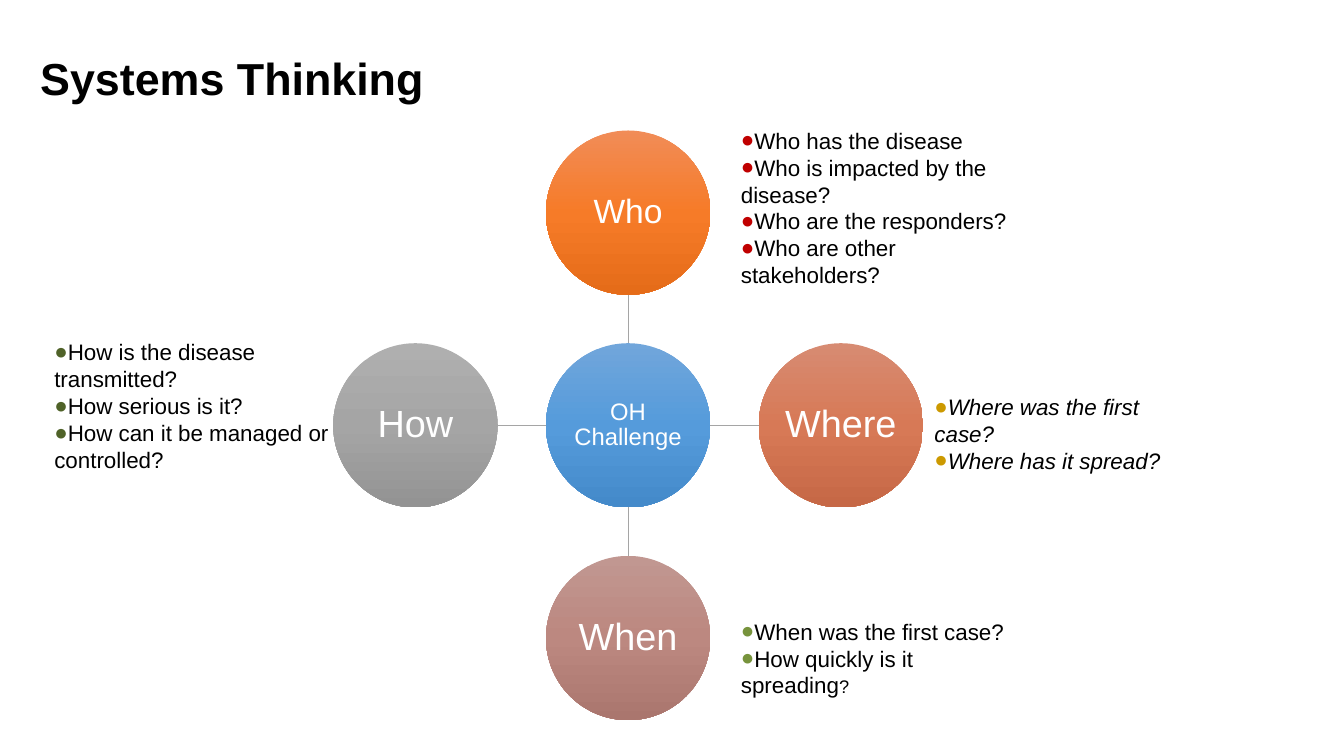
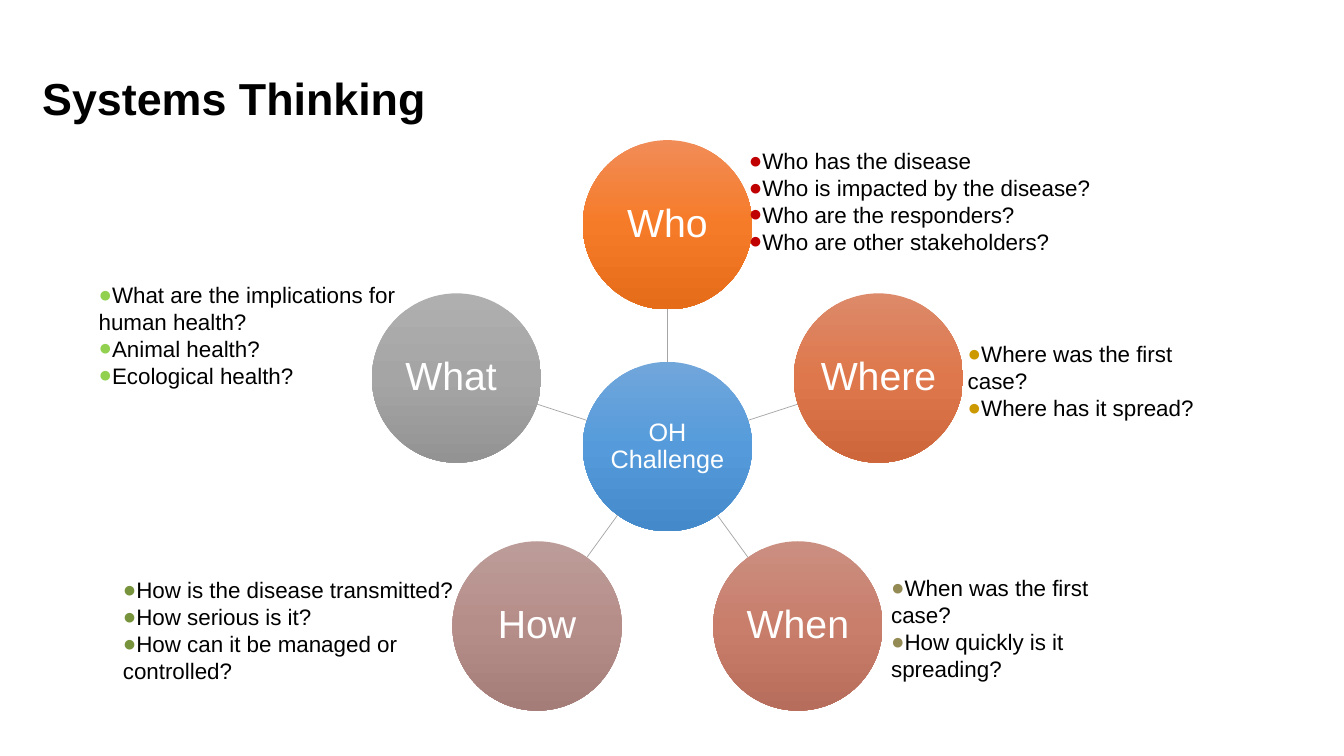
import math
from dataclasses import dataclass

from pptx import Presentation
from pptx import util as u
from pptx.dml.color import RGBColor
from pptx.enum import shapes, text
from pptx.oxml import ns
from lxml import etree

SCALE = 9144  # EMU in one px, 100 px to the inch
FONT = "Arial"
INK, PAPER, RULE = "000000", "FFFFFF", "A5A5A5"
HUB = ("71A6DB", "559BDB", "448ACA")
ORANGE = ("F18C57", "F67B28", "E56C19")
GREY = ("AFAFAF", "A5A5A5", "939393")

WHO = ["Who has the disease", "Who is impacted by the disease?",
       "Who are the responders?", "Who are other stakeholders?"]
WHERE = ["Where was the first case?", "Where has it spread?"]
WHEN = ["When was the first case?", "How quickly is it spreading?"]
HOW = ["How is the disease transmitted?", "How serious is it?",
       "How can it be managed or controlled?"]
WHAT = ["What are the implications for human health?",
        "Animal health?", "Ecological health?"]


@dataclass
class Spoke:
    """One outer circle and the note of questions beside it."""
    word: str
    size: int
    tones: tuple
    box: tuple
    dot: str
    lines: list
    slant: bool = False
    mark: int = 16  # size of the last question mark


def px(n):
    return u.Emu(round(n * SCALE))


def color(code):
    return RGBColor.from_string(code)


def sub(node, tag, **attrs):
    return etree.SubElement(node, ns.qn(tag), attrs)


def write(para, words, size, ink=INK, bold=False, slant=False):
    run = para.add_run()
    run.text = words
    font = run.font
    font.name, font.size = FONT, u.Pt(size)
    font.bold, font.italic = bold, slant
    font.color.rgb = color(ink)


def frame(slide, box):
    """Add a wrapping text box and return its text frame."""
    body = slide.shapes.add_textbox(*map(px, box)).text_frame
    body.word_wrap = True
    body.auto_size = text.MSO_AUTO_SIZE.SHAPE_TO_FIT_TEXT
    return body


def title(slide, box):
    write(frame(slide, box).paragraphs[0], "Systems Thinking", 32, bold=True)


def shade(shape, tones):
    """Fill from top to bottom through evenly spaced tones."""
    shape.fill.gradient()
    shape.fill.gradient_angle = 270
    stops = next(shape.element.iter(ns.qn("a:gsLst")))
    for old in list(stops):
        stops.remove(old)
    for i, tone in enumerate(tones):
        pos = 100000 * i // (len(tones) - 1)
        sub(sub(stops, "a:gs", pos=str(pos)), "a:srgbClr", val=tone)


def disc(slide, mid, width, tones, word, size, inset=2):
    x, y = (c - width / 2 for c in mid)
    shape = slide.shapes.add_shape(shapes.MSO_SHAPE.OVAL,
                                   *map(px, (x, y, width, width)))
    shape.shadow.inherit = False
    shape.line.fill.background()
    shade(shape, tones)
    body = shape.text_frame
    body.word_wrap = True
    body.vertical_anchor = text.MSO_ANCHOR.MIDDLE
    body.margin_left = body.margin_right = px(inset)
    body.margin_top = body.margin_bottom = px(inset)
    para = body.paragraphs[0]
    para.alignment = text.PP_ALIGN.CENTER
    para.line_spacing = 0.9
    write(para, word, size, PAPER)


def link(slide, start, end):
    line = slide.shapes.add_connector(shapes.MSO_CONNECTOR.STRAIGHT,
                                      *map(px, (*start, *end)))
    line.line.color.rgb = color(RULE)
    line.line.width = u.Pt(0.5)
    sub(line.element.spPr, "a:effectLst")


def note(slide, spoke):
    body = frame(slide, spoke.box)
    for i, words in enumerate(spoke.lines):
        para = body.add_paragraph() if i else body.paragraphs[0]
        props = para._p.get_or_add_pPr()
        props.set("marL", "0")
        props.set("indent", "0")
        sub(sub(props, "a:buClr"), "a:srgbClr", val=spoke.dot)
        sub(props, "a:buFont", typeface=FONT)
        sub(props, "a:buChar", char="●")
        small = spoke.mark != 16 and i == len(spoke.lines) - 1
        write(para, words[:-1] if small else words, 16, slant=spoke.slant)
        if small:
            write(para, words[-1], spoke.mark, slant=spoke.slant)


def wheel(slide, mid, width, orbit, size, spokes):
    """Place a hub with spokes spread evenly clockwise from the top."""
    disc(slide, mid, width, HUB, "OH Challenge", size, 1)
    for i, spoke in enumerate(spokes):
        turn = math.tau * i / len(spokes) - math.pi / 2

        def spot(reach):
            return (mid[0] + reach * math.cos(turn),
                    mid[1] + reach * math.sin(turn))

        link(slide, spot(width / 2), spot(orbit - width / 2))
        disc(slide, spot(orbit), width, spoke.tones, spoke.word, spoke.size)
    for spoke in spokes:
        note(slide, spoke)


FOUR = [
    Spoke("Who", 24, ORANGE, (725, 121, 300, 172), "C00000", WHO),
    Spoke("Where", 27, ("D78B72", "D77956", "C66846"),
          (917, 385, 250, 91), "CC9900", WHERE, slant=True),
    Spoke("When", 27, ("C19791", "BC8880", "AA766E"),
          (725, 608, 292, 91), "77933C", WHEN, mark=13),
    Spoke("How", 27, GREY, (44, 331, 325, 145), "4F6228", HOW),
]
FIVE = [
    Spoke("Who", 28, ORANGE, (733, 141, 375, 118), "C00000", WHO),
    Spoke("Where", 28, ("DD8A6A", "DE774B", "CD673B"),
          (950, 333, 283, 91), "CC9900", WHERE),
    Spoke("When", 28, ("CB8F81", "C97E6B", "B76D5B"),
          (874, 565, 258, 118), "948A54", WHEN),
    Spoke("How", 28, ("BC9C99", "B68E89", "A47C78"),
          (112, 567, 375, 118), "77933C", HOW),
    Spoke("What ", 28, GREY, (88, 274, 350, 118), "92D050", WHAT),
]


def main():
    deck = Presentation()
    deck.slide_width, deck.slide_height = px(1333), px(750)
    plans = [
        ((30, 45, 528, 64), (623, 422), 163, 211, 17, FOUR),
        ((32, 65, 419, 64), (662, 443), 168, 220, 18, FIVE),
    ]
    for head, *plan in plans:
        slide = deck.slides.add_slide(deck.slide_layouts[6])
        wheel(slide, *plan)
        title(slide, head)
    deck.save("out.pptx")


if __name__ == "__main__":
    main()
